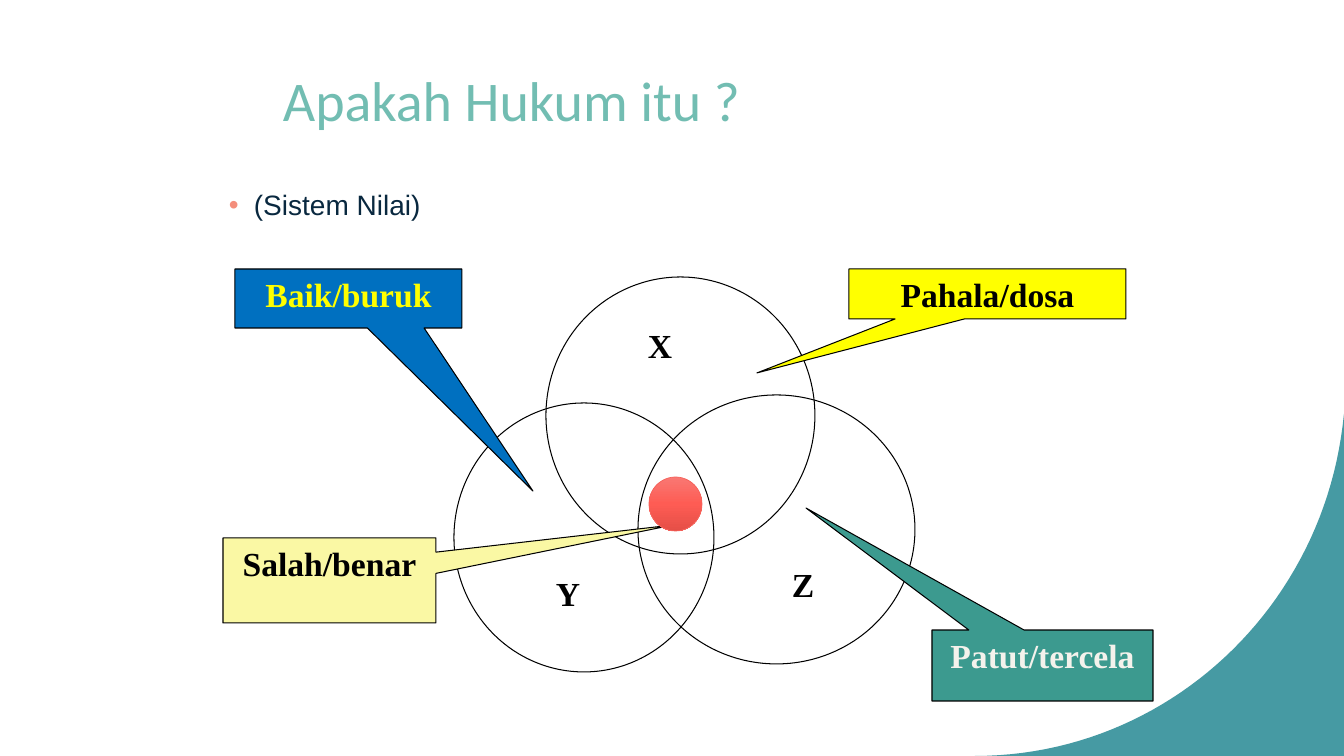
"""Builds the slide "Apakah Hukum itu ?": a three-circle Venn diagram with four callouts."""
import lxml.etree
import pptx
import pptx.dml.color
import pptx.enum.shapes
import pptx.enum.text
import pptx.oxml.ns
import pptx.util

PX = 12192000 / 1344
COLORS = {
    "teal": "18818C", "title": "72BDB2", "bullet": "F48E7C", "navy": "09283F",
    "black": "000000", "yellow": "FFFF00", "blue": "0070C0", "green": "3C9A8F",
    "cream": "F4F2EC", "pale": "FAF8A4", "core line": "F6635C",
}
CORE_STOPS = [(0, "F97873"), (50, "FE5C54"), (100, "E54F47")]

TITLE = ("Apakah Hukum itu ?", (220, 36, 907, 126))
BODY = ("(Sistem Nilai)", (219, 176, 907, 487))
CIRCLES = [(454, 403, 260, 269), (546, 277, 269, 277), (638, 395, 277, 269)]
LABELS = [("X", (638, 320, 45, 51)), ("Y", (546, 568, 45, 51)), ("Z", (782, 559, 43, 51))]
CALLOUTS = [
    ("Pahala/dosa", (849, 269, 277, 50), (757, 373), "yellow", "black"),
    ("Baik/buruk", (235, 269, 227, 59), (533, 491), "blue", "yellow"),
    ("Patut/tercela", (932, 630, 221, 71), (806, 508), "green", "cream"),
    ("Salah/benar", (223, 538, 213, 85), (673, 525), "pale", "black"),
]
CORE = (649, 477, 53, 54)
CORNER = (1344, 756)
CORNER_CURVE = [(975, 756), (1167, 756), (1326, 607), (1344, 414)]
CURVE_STEPS = 48

SHAPES = pptx.enum.shapes.MSO_SHAPE
ANCHOR = pptx.enum.text.MSO_ANCHOR
ALIGN = pptx.enum.text.PP_ALIGN


def emu(pixels):
    return pptx.util.Emu(round(pixels * PX))


def rgb(name):
    return pptx.dml.color.RGBColor.from_string(COLORS[name])


def add_xml(parent, tag, **attributes):
    return lxml.etree.SubElement(parent, pptx.oxml.ns.qn(tag), attributes)


def write(shape, text, size, font, color, bold=False):
    para = shape.text_frame.paragraphs[0]
    para.text = text
    span = para.runs[0].font
    span.size, span.name, span.bold = pptx.util.Pt(size), font, bold
    span.color.rgb = rgb(color)
    return para


def add_text_box(page, box):
    shape = page.shapes.add_textbox(*map(emu, box))
    shape.text_frame.word_wrap = True
    return shape


def add_outlined(page, kind, box, fill=None, line="black", width=0.75):
    shape = page.shapes.add_shape(kind, *map(emu, box))
    shape.shadow.inherit = False
    if fill:
        shape.fill.solid()
        shape.fill.fore_color.rgb = rgb(fill)
    else:
        shape.fill.background()
    shape.line.color.rgb = rgb(line)
    shape.line.width = pptx.util.Pt(width)
    return shape


def curve_point(step):
    t = step / CURVE_STEPS
    weights = ((1 - t) ** 3, 3 * t * (1 - t) ** 2, 3 * t * t * (1 - t), t ** 3)
    return tuple(emu(sum(w * point[axis] for w, point in zip(weights, CORNER_CURVE)))
                 for axis in (0, 1))


def add_corner(page):
    builder = page.shapes.build_freeform(*map(emu, CORNER))
    builder.add_line_segments([curve_point(step) for step in range(CURVE_STEPS + 1)])
    corner = builder.convert_to_shape()
    corner.shadow.inherit = False
    corner.fill.solid()
    corner.fill.fore_color.rgb = rgb("teal")
    color = corner.fill._xPr.find(".//" + pptx.oxml.ns.qn("a:srgbClr"))
    add_xml(color, "a:alpha", val="80000")
    corner.line.fill.background()


def add_heading(page):
    text, box = TITLE
    title = add_text_box(page, box)
    title.text_frame.vertical_anchor = ANCHOR.MIDDLE
    para = write(title, text, 40, "Calibri", "title")
    para._p.get_or_add_pPr().set("marL", str(emu(53)))

    text, box = BODY
    para = write(add_text_box(page, box), text, 20, "Arial", "navy")
    para.line_spacing = 1.2
    para.space_before = pptx.util.Pt(10)
    properties = para._p.get_or_add_pPr()
    properties.set("marL", str(emu(25)))
    properties.set("indent", str(emu(-25)))
    add_xml(add_xml(properties, "a:buClr"), "a:srgbClr", val=COLORS["bullet"])
    add_xml(properties, "a:buFont", typeface="Arial")
    add_xml(properties, "a:buChar", char="•")


def add_label(page, text, box):
    label = add_text_box(page, box)
    label.text_frame.word_wrap = False
    label.text_frame.auto_size = pptx.enum.text.MSO_AUTO_SIZE.SHAPE_TO_FIT_TEXT
    write(label, text, 24, "Times New Roman", "black", True)


def add_callout(page, text, box, tip, fill, color):
    callout = add_outlined(page, SHAPES.RECTANGULAR_CALLOUT, box, fill)
    left, top, width, height = box
    callout.adjustments[0] = (tip[0] - left) / width - 0.5
    callout.adjustments[1] = (tip[1] - top) / height - 0.5
    callout.text_frame.vertical_anchor = ANCHOR.TOP
    para = write(callout, text, 24, "Times New Roman", color, True)
    para.alignment = ALIGN.CENTER


def add_core(page):
    core = add_outlined(page, SHAPES.OVAL, CORE, line="core line", width=0.5)
    core.fill.gradient()
    core.fill.gradient_angle = 270
    stops = core.fill._xPr.find(".//" + pptx.oxml.ns.qn("a:gsLst"))
    for stop in list(stops):
        stops.remove(stop)
    for position, color in CORE_STOPS:
        stop = add_xml(stops, "a:gs", pos=str(position * 1000))
        add_xml(stop, "a:srgbClr", val=color)


def main():
    deck = pptx.Presentation()
    deck.slide_width, deck.slide_height = emu(1344), emu(756)
    page = deck.slides.add_slide(deck.slide_layouts[6])
    add_corner(page)
    add_heading(page)
    for box in CIRCLES:
        add_outlined(page, SHAPES.OVAL, box)
    for label in LABELS:
        add_label(page, *label)
    for callout in CALLOUTS:
        add_callout(page, *callout)
    add_core(page)
    deck.save("out.pptx")


if __name__ == "__main__":
    main()
